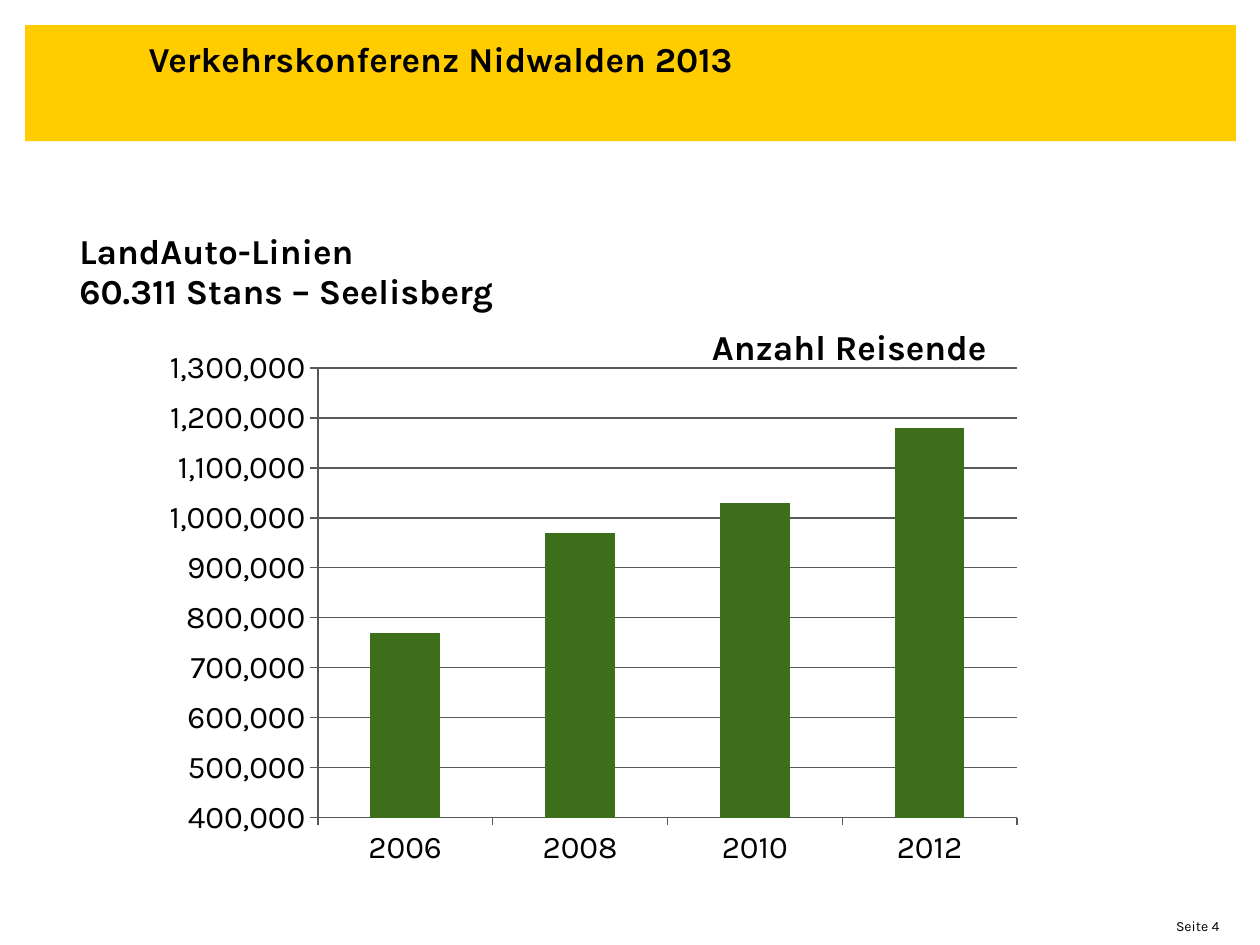
from pptx import Presentation
from pptx.chart.data import CategoryChartData as ChartData
from pptx.dml.color import RGBColor
from pptx.enum.chart import XL_CHART_TYPE as ChartType, XL_TICK_MARK as TickMark
from pptx.enum.shapes import MSO_SHAPE as ShapeKind
from pptx.enum.text import MSO_ANCHOR as Anchor, MSO_AUTO_SIZE as AutoSize, PP_ALIGN as Align
from pptx.oxml import parse_xml
from pptx.oxml.ns import nsdecls
from pptx.util import Inches, Pt

FONT = "Karla"
COLORS = {"band": "FFCC00", "text": "000000", "bar": "3D6F1A", "grid": "595959"}
PASSENGERS = {"2006": 770000, "2008": 970000, "2010": 1030000, "2012": 1180000}
PLOT = {"x": 0.179, "y": 0.035, "w": 0.698, "h": 0.824}


def color(name):
    """Return the named colour."""
    return RGBColor.from_string(COLORS[name])


def write_text(frame, text, size=20, bold=True, align=Align.LEFT, spacing=0.95):
    """Write one formatted paragraph into a frame without margins."""
    frame.word_wrap = True
    frame.auto_size = AutoSize.NONE
    frame.vertical_anchor = Anchor.TOP
    frame.margin_left = frame.margin_right = frame.margin_top = frame.margin_bottom = 0
    para = frame.paragraphs[0]
    para.text = text
    para.alignment = align
    para.line_spacing = spacing
    for span in para.runs:
        span.font.name = FONT
        span.font.size = Pt(size)
        span.font.bold = bold
        span.font.color.rgb = color("text")


def add_label(page, box, text, **style):
    """Add a text box."""
    label = page.shapes.add_textbox(*map(Inches, box))
    write_text(label.text_frame, text, **style)


def add_header(page, box, text):
    """Place the yellow band with the slide title on it."""
    left, top, width, height = box
    band = page.shapes.add_shape(ShapeKind.RECTANGLE, *map(Inches, box))
    band.shadow.inherit = False
    band.fill.solid()
    band.fill.fore_color.rgb = color("band")
    band.line.fill.background()
    title = page.shapes.title
    title.element.addprevious(band.element)
    title.left, title.top = Inches(left + 0.98), Inches(top + 0.12)
    title.width, title.height = Inches(width - 1.11), Inches(height - 0.25)
    write_text(title.text_frame, text)


def style_axis(axis):
    """Give an axis its ticks and line."""
    axis.major_tick_mark = TickMark.OUTSIDE
    axis.minor_tick_mark = TickMark.NONE
    axis.format.line.color.rgb = color("grid")
    axis.format.line.width = Pt(0.75)


def set_plot_area(chart):
    """Fix the inner plot area within the chart."""
    modes = "".join(f'<c:{side}Mode val="edge"/>' for side in "xy")
    sizes = "".join(f'<c:{side} val="{value}"/>' for side, value in PLOT.items())
    layout = parse_xml(
        f'<c:layout {nsdecls("c")}><c:manualLayout><c:layoutTarget val="inner"/>'
        f"{modes}{sizes}</c:manualLayout></c:layout>"
    )
    area = chart.element.chart.plotArea
    for old in area.xpath("c:layout"):
        area.remove(old)
    area.insert(0, layout)


def add_passenger_chart(page, box):
    """Add the column chart of passenger numbers."""
    data = ChartData(number_format="#,##0")
    data.categories = list(PASSENGERS)
    data.add_series("Anzahl Reisende", list(PASSENGERS.values()))
    chart = page.shapes.add_chart(ChartType.COLUMN_CLUSTERED, *map(Inches, box), data).chart
    chart.has_title = False
    chart.has_legend = False
    chart.font.name = FONT
    chart.font.size = Pt(18)
    chart.font.color.rgb = color("text")
    plot = chart.plots[0]
    plot.gap_width = 150
    plot.vary_by_categories = False
    fill = plot.series[0].format.fill
    fill.solid()
    fill.fore_color.rgb = color("bar")
    style_axis(chart.category_axis)
    axis = chart.value_axis
    style_axis(axis)
    axis.minimum_scale, axis.maximum_scale, axis.major_unit = 400000, 1300000, 100000
    axis.tick_labels.number_format = "#,##0"
    axis.tick_labels.number_format_is_linked = False
    axis.has_major_gridlines = True
    axis.major_gridlines.format.line.color.rgb = color("grid")
    axis.major_gridlines.format.line.width = Pt(0.75)
    set_plot_area(chart)


def main():
    """Build and save the slide."""
    deck = Presentation()
    deck.slide_width, deck.slide_height = Inches(10), Inches(7.5)
    page = deck.slides.add_slide(deck.slide_layouts[5])
    add_header(page, (0.2, 0.2, 9.61, 0.92), "Verkehrskonferenz Nidwalden 2013")
    add_label(page, (0.63, 1.85, 7.8, 0.66), "LandAuto-Linien\v60.311 Stans – Seelisberg")
    add_passenger_chart(page, (1.1, 2.77, 7.95, 4.33))
    add_label(page, (5.65, 2.61, 2.78, 0.33), "Anzahl Reisende")
    add_label(page, (9.17, 7.28, 0.51, 0.14), "Seite 4", size=8, bold=False,
              align=Align.RIGHT, spacing=1.0)
    deck.save("out.pptx")


if __name__ == "__main__":
    main()
